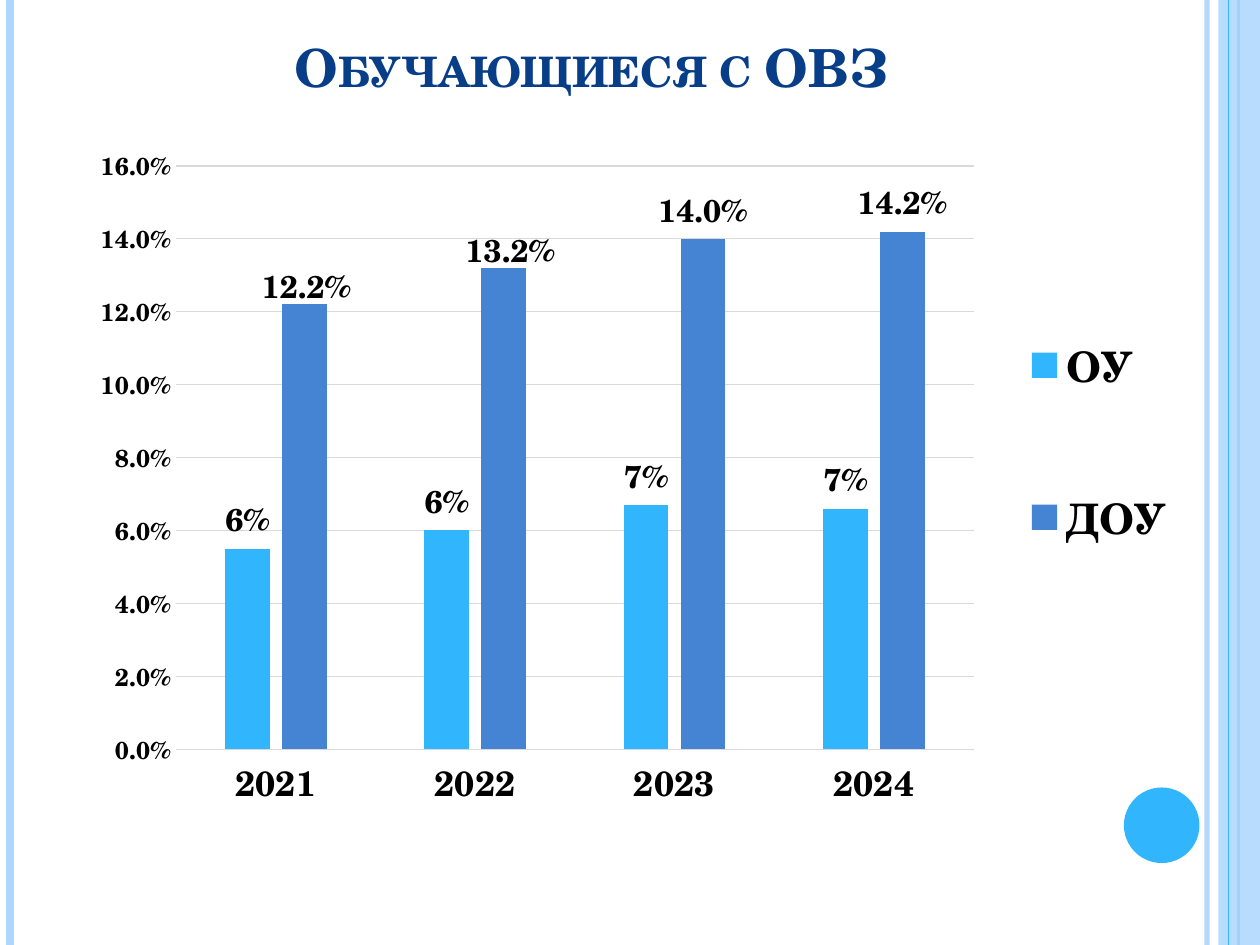
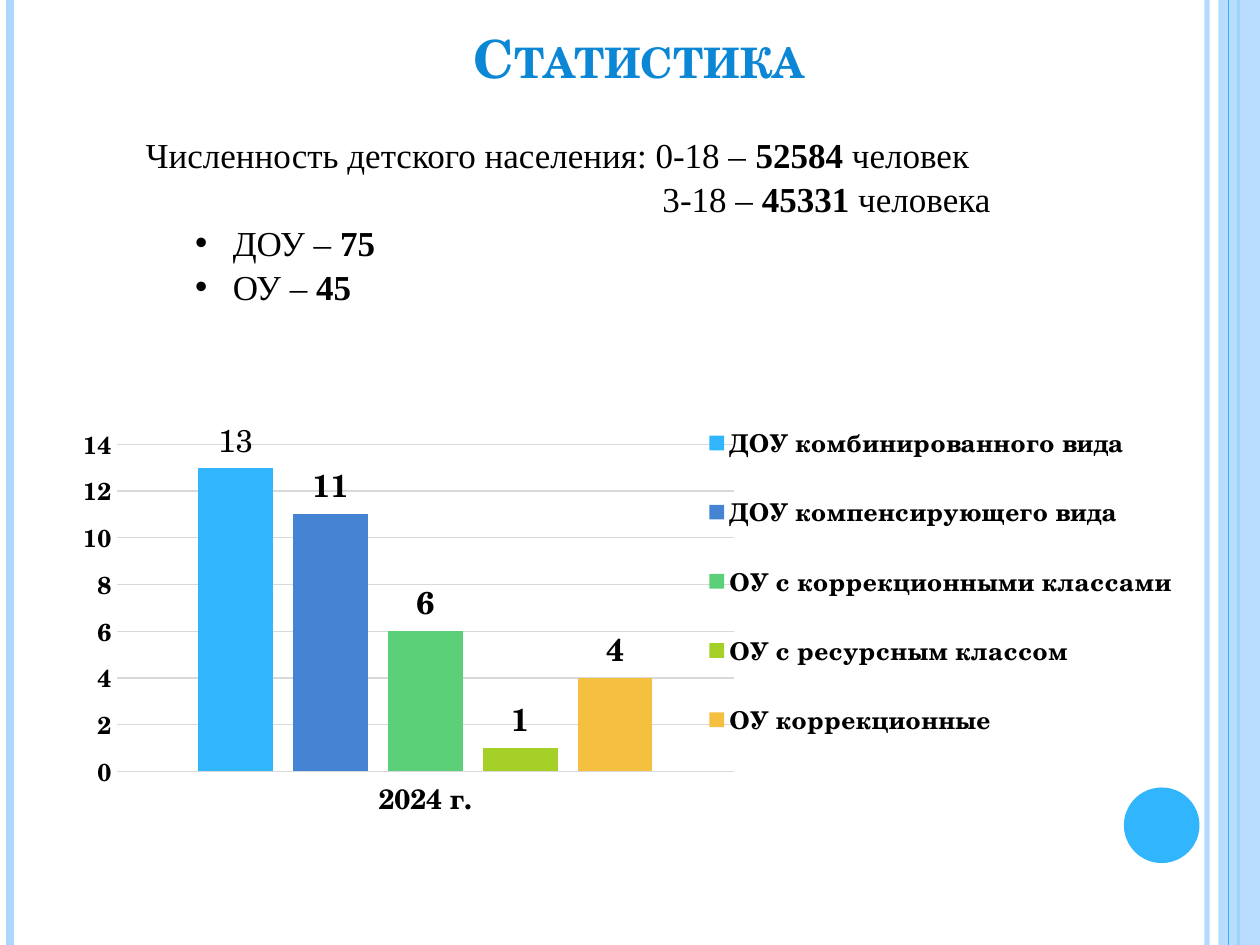
from dataclasses import dataclass

import pptx
import pptx.chart.data
import pptx.dml.color
import pptx.enum.chart
import pptx.enum.shapes
import pptx.enum.text
import pptx.oxml
import pptx.oxml.ns
import pptx.util
from pptx.util import Inches, Pt

HEADING_FONT = "TeX Gyre Schola"
BODY_FONT = "Times New Roman"
BLACK, GRID_GREY = "000000", "D9D9D9"
PALE_BLUE, SKY_BLUE, MID_BLUE = "AED7FE", "31B6FD", "4584D3"
NAVY, BRIGHT_BLUE = "073E87", "0B87D6"
GREEN, LIME, AMBER = "5BD078", "A5D028", "F5C040"
SLIDE_HEIGHT = 7.5


@dataclass(frozen=True)
class Box:
    left: float
    top: float
    width: float
    height: float

    def lengths(self) -> tuple:
        return tuple(Inches(v) for v in (self.left, self.top, self.width, self.height))


@dataclass(frozen=True)
class Rule:
    x: float
    color: str
    weight: float
    opacity: int = 100


@dataclass(frozen=True)
class Series:
    name: str
    values: tuple
    color: str
    label_format: str = "General"
    label_bold: bool = True


@dataclass(frozen=True)
class ColumnChart:
    box: Box
    categories: tuple
    series: tuple
    plot_area: Box  # fractions of the chart
    legend_area: Box  # fractions of the chart
    axis_max: float
    axis_step: float
    axis_format: str
    category_size: int
    legend_size: int


@dataclass(frozen=True)
class Fact:
    lead: str
    figure: str
    tail: str = ""
    margin: float = 0
    bulleted: bool = False


RULES_BEHIND_BAND = (
    Rule(9.58, PALE_BLUE, 3, 93),
    Rule(0.08, PALE_BLUE, 4.5),
    Rule(9.83, SKY_BLUE, 1.5),
)
RULE_OVER_BAND = Rule(9.75, SKY_BLUE, 0.75)

LEARNERS_CHART = ColumnChart(
    box=Box(0.5, 1.15, 8.89, 6.19),
    categories=("2021", "2022", "2023", "2024"),
    series=(
        Series("ОУ", (0.055, 0.06, 0.067, 0.066), SKY_BLUE, "0%"),
        Series("ДОУ", (0.122, 0.132, 0.14, 0.142), MID_BLUE, "0.0%"),
    ),
    plot_area=Box(0.101, 0.027, 0.712, 0.748),
    legend_area=Box(0.85, 0.13, 0.15, 0.5),
    axis_max=0.16, axis_step=0.02, axis_format="0.0%",
    category_size=20, legend_size=24,
)

INSTITUTIONS_CHART = ColumnChart(
    box=Box(0.31, 2.96, 9.06, 3.94),
    categories=("2024 г.",),
    series=(
        Series("ДОУ комбинированного вида", (13,), SKY_BLUE, label_bold=False),
        Series("ДОУ компенсирующего вида", (11,), MID_BLUE),
        Series("ОУ с коррекционными классами", (6,), GREEN),
        Series("ОУ с ресурсным классом", (1,), LIME),
        Series("ОУ коррекционные", (4,), AMBER),
    ),
    plot_area=Box(0.068, 0.144, 0.541, 0.659),
    legend_area=Box(0.58, 0.04, 0.42, 0.76),
    axis_max=14, axis_step=2, axis_format="General",
    category_size=16, legend_size=14,
)

POPULATION_FACTS = (
    Fact("Численность детского населения: 0-18 – ", "52584", " человек"),
    Fact("3-18 – ", "45331", " человека", margin=4.1),
    Fact("ДОУ – ", "75", margin=0.69, bulleted=True),
    Fact("ОУ – ", "45", margin=0.69, bulleted=True),
)


def rgb(color: str) -> pptx.dml.color.RGBColor:
    return pptx.dml.color.RGBColor.from_string(color)


def xml(tag: str, inner: str = "", attributes: str = ""):
    """Make one element, declaring the namespaces of drawings and charts."""
    spaces = pptx.oxml.ns.nsdecls("a", "c")
    return pptx.oxml.parse_xml(f"<{tag} {spaces} {attributes}>{inner}</{tag}>")


def style_font(font, size: float, color: str = BLACK, bold: bool = True,
               name: str = HEADING_FONT) -> None:
    font.size, font.bold, font.name = Pt(size), bold, name
    font.color.rgb = rgb(color)


def set_opacity(shape, percent: int) -> None:
    """Make the first solid colour of the shape translucent."""
    shape.element.xpath(".//a:srgbClr")[0].append(
        xml("a:alpha", attributes=f'val="{percent * 1000}"'))


def draw_rule(slide, rule: Rule) -> None:
    x = Inches(rule.x)
    line = slide.shapes.add_connector(
        pptx.enum.shapes.MSO_CONNECTOR.STRAIGHT, x, 0, x, Inches(SLIDE_HEIGHT))
    line.line.color.rgb = rgb(rule.color)
    line.line.width = Pt(rule.weight)
    if rule.opacity < 100:
        set_opacity(line, rule.opacity)
    line.element.spPr.append(xml("a:effectLst"))


def draw_filled(slide, preset, box: Box, color: str):
    shape = slide.shapes.add_shape(preset, *box.lengths())
    shape.shadow.inherit = False
    shape.fill.solid()
    shape.fill.fore_color.rgb = rgb(color)
    shape.line.fill.background()
    return shape


def draw_frame(slide) -> None:
    """Draw the side rules, the right band and the disc of every slide."""
    presets = pptx.enum.shapes.MSO_SHAPE
    for rule in RULES_BEHIND_BAND:
        draw_rule(slide, rule)
    band = draw_filled(slide, presets.RECTANGLE, Box(9.67, 0, 0.33, SLIDE_HEIGHT), PALE_BLUE)
    set_opacity(band, 87)
    draw_rule(slide, RULE_OVER_BAND)
    draw_filled(slide, presets.OVAL, Box(8.92, 6.25, 0.6, 0.6), SKY_BLUE)


def add_title(slide, text: str, box: Box, color: str) -> None:
    frame = slide.shapes.add_textbox(*box.lengths()).text_frame
    frame.word_wrap = True
    frame.vertical_anchor = pptx.enum.text.MSO_ANCHOR.BOTTOM
    frame.text = text
    run = frame.paragraphs[0].runs[0]
    style_font(run.font, 30, color)
    run.font._element.set("cap", "small")


def add_facts(slide, facts: tuple, box: Box) -> None:
    frame = slide.shapes.add_textbox(*box.lengths()).text_frame
    frame.word_wrap = True
    for number, fact in enumerate(facts):
        paragraph = frame.add_paragraph() if number else frame.paragraphs[0]
        paragraph.line_spacing = 1.05
        for text in filter(None, (fact.lead, fact.figure, fact.tail)):
            run = paragraph.add_run()
            run.text = text
            style_font(run.font, 20, bold=text == fact.figure, name=BODY_FONT)
        properties = paragraph._p.get_or_add_pPr()
        properties.set("marL", str(Inches(fact.margin)))
        if fact.bulleted:
            properties.set("indent", str(Inches(-0.3)))
            properties.append(xml("a:buFont", attributes='typeface="Arial"'))
            properties.append(xml("a:buChar", attributes='char="•"'))


def layout_xml(mode: str, **values: float):
    inner = "".join(f'<c:{key} val="{value}"/>' for key, value in values.items())
    return xml("c:layout", f"<c:manualLayout>{mode}{inner}</c:manualLayout>")


def place_part(part, area: Box, index: int, target: str = "") -> None:
    """Give a chart part a fixed place, in fractions of the chart."""
    for automatic in part.xpath("./c:layout"):
        part.remove(automatic)
    mode = target + '<c:xMode val="edge"/><c:yMode val="edge"/>'
    part.insert(index, layout_xml(
        mode, x=area.left, y=area.top, w=area.width, h=area.height))


def style_axes(chart, spec: ColumnChart) -> None:
    tick_mark = pptx.enum.chart.XL_TICK_MARK.NONE
    for axis, size in ((chart.category_axis, spec.category_size), (chart.value_axis, 14)):
        axis.major_tick_mark = axis.minor_tick_mark = tick_mark
        style_font(axis.tick_labels.font, size)
    chart.category_axis.has_major_gridlines = False
    values = chart.value_axis
    values.minimum_scale, values.maximum_scale = 0, spec.axis_max
    values.major_unit = spec.axis_step
    values.tick_labels.number_format = spec.axis_format
    values.tick_labels.number_format_is_linked = False
    values.format.line.fill.background()
    values.has_major_gridlines = True
    for line in (chart.category_axis.format.line, values.major_gridlines.format.line):
        line.color.rgb = rgb(GRID_GREY)
        line.width = Pt(0.75)


def add_column_chart(slide, spec: ColumnChart):
    data = pptx.chart.data.CategoryChartData()
    data.categories = spec.categories
    for series in spec.series:
        data.add_series(series.name, series.values, series.label_format)
    chart = slide.shapes.add_chart(
        pptx.enum.chart.XL_CHART_TYPE.COLUMN_CLUSTERED, *spec.box.lengths(), data).chart
    style_font(chart.font, 14)
    chart.has_title = False
    style_axes(chart, spec)

    plot = chart.plots[0]
    plot.gap_width, plot.overlap, plot.vary_by_categories = 219, -27, False
    for drawn, series in zip(plot.series, spec.series):
        drawn.format.fill.solid()
        drawn.format.fill.fore_color.rgb = rgb(series.color)
        labels = drawn.data_labels
        labels.show_value = True
        labels.number_format = series.label_format
        labels.number_format_is_linked = False
        labels.position = pptx.enum.chart.XL_LABEL_POSITION.OUTSIDE_END
        style_font(labels.font, 18, bold=series.label_bold)

    chart.has_legend = True
    chart.legend.position = pptx.enum.chart.XL_LEGEND_POSITION.RIGHT
    chart.legend.include_in_layout = False
    style_font(chart.legend.font, spec.legend_size)
    place_part(chart.element.xpath(".//c:plotArea")[0], spec.plot_area, 0,
               '<c:layoutTarget val="inner"/>')
    place_part(chart.element.xpath(".//c:legend")[0], spec.legend_area, 1)
    return chart


def nudge_label(series, point: int, number_format: str, x: float, y: float) -> None:
    """Shift one data label by fractions of the chart."""
    label = series.points[point].data_label
    label.position = pptx.enum.chart.XL_LABEL_POSITION.OUTSIDE_END
    style_font(label.font, 18)
    element = series._element.xpath(f"./c:dLbls/c:dLbl[c:idx/@val='{point}']")[0]
    element.insert(1, layout_xml("", x=x, y=y))
    element.insert(2, xml(
        "c:numFmt", attributes=f'formatCode="{number_format}" sourceLinked="0"'))


def add_framed_slide(deck):
    slide = deck.slides.add_slide(deck.slide_layouts[6])
    draw_frame(slide)
    return slide


def main() -> None:
    deck = pptx.Presentation()
    deck.slide_width, deck.slide_height = Inches(10), Inches(SLIDE_HEIGHT)

    learners = add_framed_slide(deck)
    preschools = add_column_chart(learners, LEARNERS_CHART).plots[0].series[1]
    for point, shift in enumerate((0.002, 0.006)):
        nudge_label(preschools, point, "0.0%", shift, 0.014)
    add_title(learners, "Обучающиеся с ОВЗ", Box(2.24, 0.23, 5.39, 0.6), NAVY)

    statistics = add_framed_slide(deck)
    add_column_chart(statistics, INSTITUTIONS_CHART)
    add_title(statistics, "Статистика", Box(3.66, 0.13, 2.99, 0.63), BRIGHT_BLUE)
    add_facts(statistics, POPULATION_FACTS, Box(1.06, 0.99, 7.87, 1.45))

    deck.save("out.pptx")


if __name__ == "__main__":
    main()
